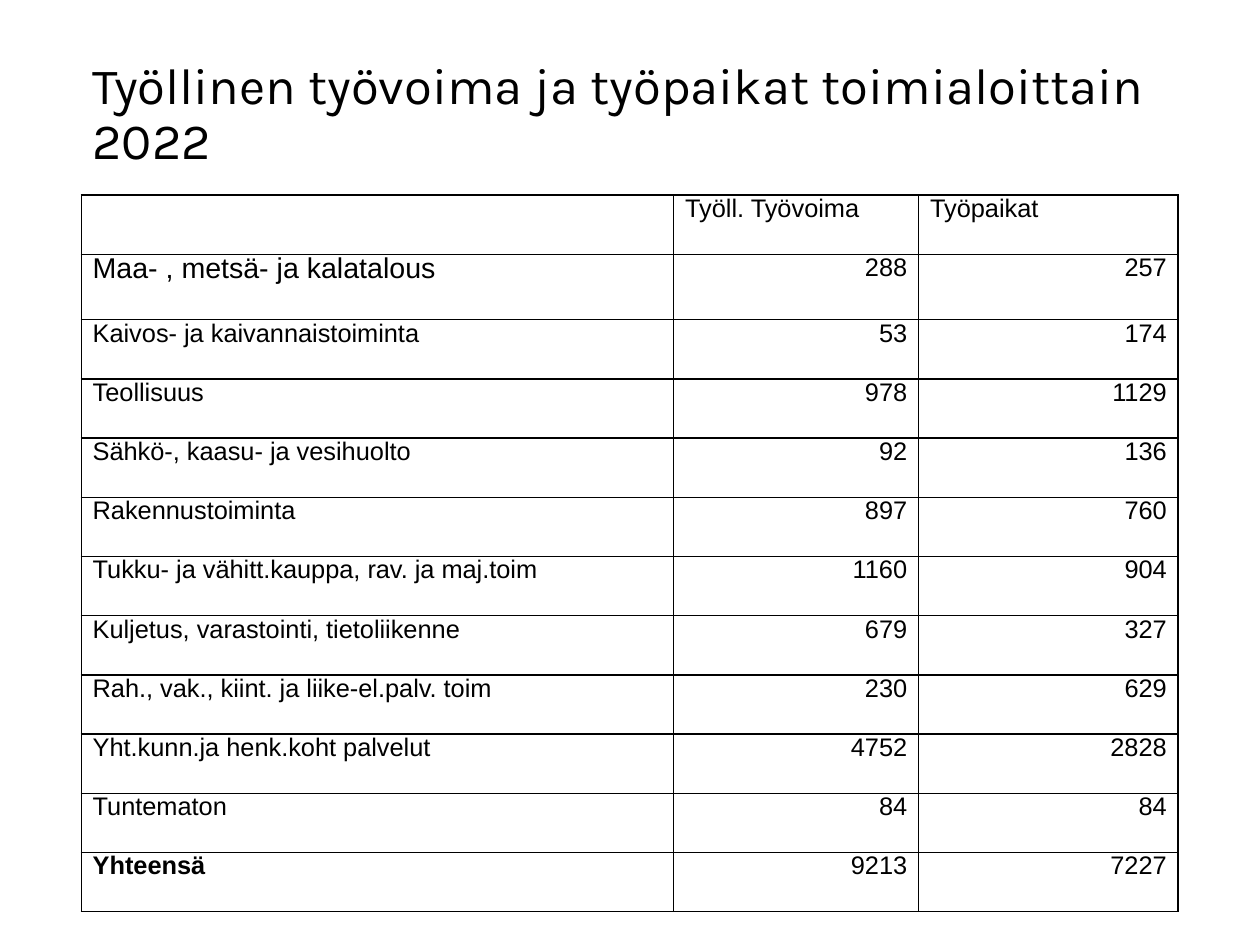
from dataclasses import dataclass

import pptx
import pptx.dml.color
import pptx.enum.text
import pptx.oxml
import pptx.oxml.ns
import pptx.slide
import pptx.table
import pptx.text.text
import pptx.util

Pt = pptx.util.Pt
ALIGN = pptx.enum.text.PP_ALIGN


@dataclass(frozen=True)
class Theme:
    ink: str = "000000"
    title_font: str = "Karla"
    body_font: str = "Arial"
    title_size: float = 32
    body_size: float = 16
    large_size: float = 18
    title_spacing: float = 0.9
    body_spacing: float = 0.74
    border: float = 1


@dataclass(frozen=True)
class Industry:
    name: str
    employed: str
    jobs: str
    size: float = Theme.body_size
    bold: bool = False
    height: float = 37.3
    number_align: ALIGN = ALIGN.RIGHT


THEME = Theme()
TITLE = "Työllinen työvoima ja työpaikat toimialoittain 2022"
COLUMN_WIDTHS = (373.2, 154.3, 163.5)
ROWS = (
    Industry("", "Työll. Työvoima", "Työpaikat", number_align=ALIGN.LEFT),
    Industry("Maa- , metsä- ja kalatalous", "288", "257", size=THEME.large_size, height=41.3),
    Industry("Kaivos- ja kaivannaistoiminta", "53", "174"),
    Industry("Teollisuus", "978", "1129"),
    Industry("Sähkö-, kaasu- ja vesihuolto", "92", "136"),
    Industry("Rakennustoiminta", "897", "760"),
    Industry("Tukku- ja vähitt.kauppa, rav. ja maj.toim", "1160", "904"),
    Industry("Kuljetus, varastointi, tietoliikenne", "679", "327"),
    Industry("Rah., vak., kiint. ja liike-el.palv. toim", "230", "629"),
    Industry("Yht.kunn.ja henk.koht palvelut", "4752", "2828"),
    Industry("Tuntematon", "84", "84"),
    Industry("Yhteensä", "9213", "7227", bold=True),
)


def write(tf: pptx.text.text.TextFrame, text: str, font: str, size: float,
          spacing: float, align: ALIGN = ALIGN.LEFT, bold: bool = False) -> None:
    p = tf.paragraphs[0]
    p.alignment = align
    p.line_spacing = spacing
    if not text:
        p.font.size = Pt(size)
        return
    r = p.add_run()
    r.text = text
    r.font.name = font
    r.font.size = Pt(size)
    r.font.bold = bold
    r.font.color.rgb = pptx.dml.color.RGBColor.from_string(THEME.ink)


def add_title(s: pptx.slide.Slide) -> None:
    sp = s.shapes.add_textbox(Pt(51.2), Pt(23.8), Pt(714.2), Pt(99.4))
    tf = sp.text_frame
    tf.word_wrap = True
    tf.vertical_anchor = pptx.enum.text.MSO_ANCHOR.MIDDLE
    tf.margin_top = Pt(2.2)
    write(tf, TITLE, THEME.title_font, THEME.title_size, THEME.title_spacing)


def outline(cell: pptx.table._Cell) -> None:
    tc_pr = cell._tc.get_or_add_tcPr()
    for side in ("lnL", "lnR", "lnT", "lnB"):
        tc_pr.append(pptx.oxml.parse_xml(
            f'<a:{side} {pptx.oxml.ns.nsdecls("a")} w="{Pt(THEME.border)}">'
            f'<a:solidFill><a:srgbClr val="{THEME.ink}"/></a:solidFill></a:{side}>'))


def add_industry_table(s: pptx.slide.Slide) -> None:
    height = sum(row.height for row in ROWS)
    sp = s.shapes.add_table(len(ROWS), len(COLUMN_WIDTHS), Pt(51.2), Pt(122.9),
                            Pt(sum(COLUMN_WIDTHS)), Pt(height))
    table = sp.table
    table.first_row = False
    table.horz_banding = False
    for column, width in zip(table.columns, COLUMN_WIDTHS):
        column.width = Pt(width)
    for i, row in enumerate(ROWS):
        table.rows[i].height = Pt(row.height)
        for j, text in enumerate((row.name, row.employed, row.jobs)):
            cell = table.cell(i, j)
            outline(cell)
            cell.fill.background()
            is_name = j == 0
            write(cell.text_frame, text, THEME.body_font,
                  row.size if is_name else THEME.body_size, THEME.body_spacing,
                  ALIGN.LEFT if is_name else row.number_align, row.bold and is_name)


def main() -> None:
    prs = pptx.Presentation()
    prs.slide_width = Pt(793.7)
    prs.slide_height = Pt(595.3)
    s = prs.slides.add_slide(prs.slide_layouts[6])
    add_title(s)
    add_industry_table(s)
    prs.save("out.pptx")


if __name__ == "__main__":
    main()
